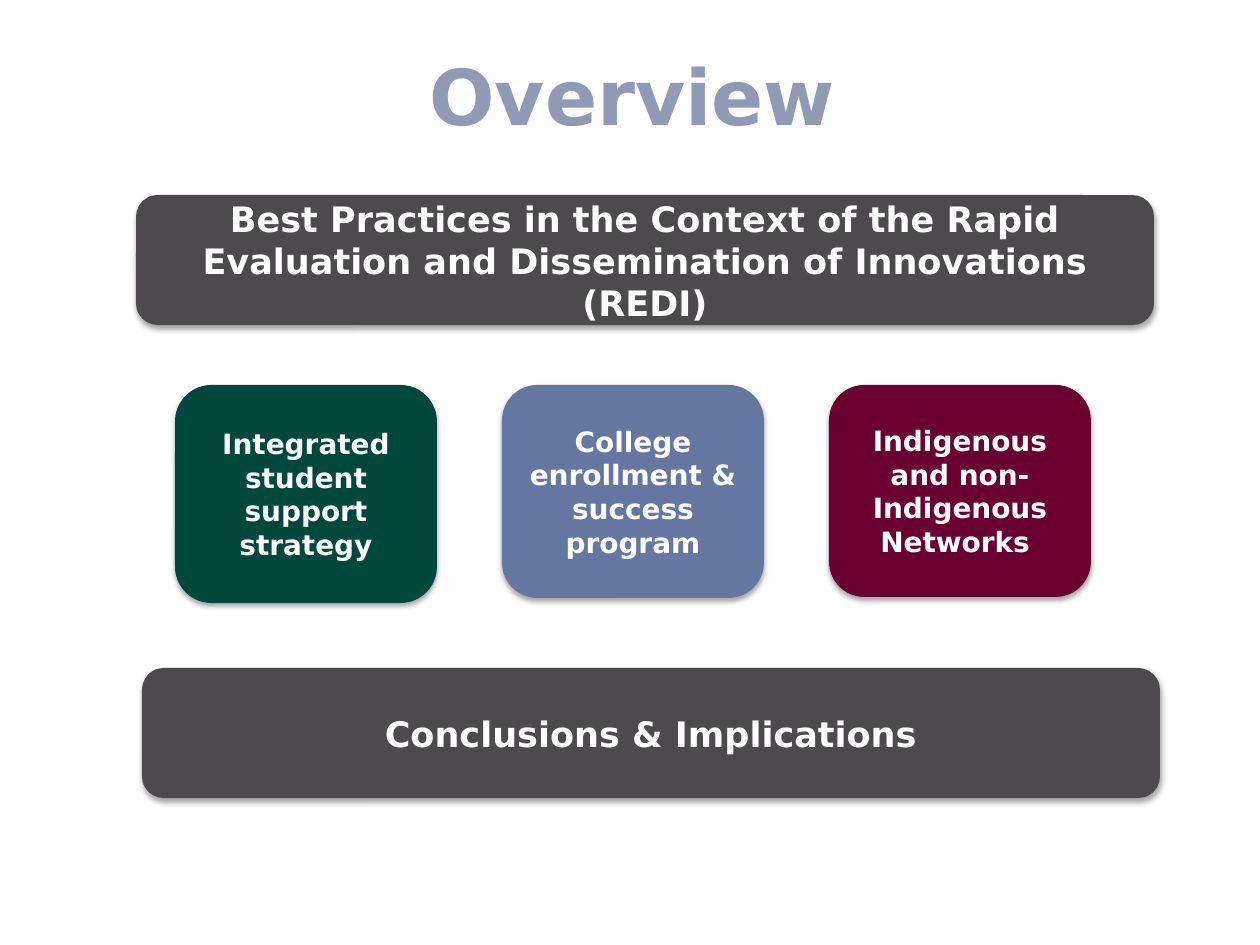
from lxml.etree import SubElement
from pptx import Presentation
from pptx.dml.color import RGBColor
from pptx.enum.shapes import MSO_SHAPE
from pptx.enum.text import MSO_ANCHOR, PP_ALIGN
from pptx.oxml.ns import qn
from pptx.util import Emu, Pt

PX = 914400 // 126
FONT = "DejaVu Sans"
WHITE = RGBColor(0xFF, 0xFF, 0xFF)
LAVENDER = RGBColor(0x90, 0x9A, 0xB7)
CHARCOAL = RGBColor(0x4C, 0x4A, 0x4C)
GREEN = RGBColor(0x00, 0x48, 0x3B)
BLUE = RGBColor(0x65, 0x76, 0xA0)
MAROON = RGBColor(0x6A, 0x00, 0x32)

TITLE = "Overview"
BANNERS = [
    ("Best Practices in the Context of the Rapid Evaluation and "
     "Dissemination of Innovations (REDI)", 136, 195),
    ("Conclusions & Implications", 142, 668),
]
CARDS = [
    ("Integrated student support strategy", GREEN, 218),
    ("College enrollment & success program", BLUE, 213),
    ("Indigenous and non-Indigenous Networks ", MAROON, 212),
]
BANNER_WIDTH, BANNER_HEIGHT = 1018, 130
CARD_LEFT, CARD_TOP, CARD_WIDTH, CARD_STEP = 175, 385, 262, 327


def px(*lengths):
    return [Emu(length * PX) for length in lengths]


def write(box, text, size, color):
    frame = box.text_frame
    frame.word_wrap = True
    frame.vertical_anchor = MSO_ANCHOR.MIDDLE
    para = frame.paragraphs[0]
    para.alignment = PP_ALIGN.CENTER
    span = para.add_run()
    span.text = text
    span.font.name = FONT
    span.font.size = Pt(size)
    span.font.bold = True
    span.font.color.rgb = color


def add_shadow(box):
    box.shadow.inherit = False
    effects = box.element.spPr.find(qn("a:effectLst"))
    shadow = SubElement(effects, qn("a:outerShdw"), blurRad=str(Pt(3.1)),
                        dist=str(Pt(1.8)), dir="5400000", rotWithShape="0")
    color = SubElement(shadow, qn("a:srgbClr"), val="000000")
    SubElement(color, qn("a:alpha"), val="35000")


def add_panel(page, text, size, fill, *bounds):
    box = page.shapes.add_shape(MSO_SHAPE.ROUNDED_RECTANGLE, *px(*bounds))
    box.fill.solid()
    box.fill.fore_color.rgb = fill
    box.line.fill.background()
    add_shadow(box)
    write(box, text, size, WHITE)


def main():
    deck = Presentation()
    deck.slide_width, deck.slide_height = px(1260, 945)
    page = deck.slides.add_slide(deck.slide_layouts[6])

    title = page.shapes.add_textbox(*px(-34, 0, 1333, 189))
    write(title, TITLE, 44, LAVENDER)

    for text, left, top in BANNERS:
        add_panel(page, text, 20, CHARCOAL,
                  left, top, BANNER_WIDTH, BANNER_HEIGHT)

    for index, (text, fill, height) in enumerate(CARDS):
        add_panel(page, text, 16, fill, CARD_LEFT + index * CARD_STEP,
                  CARD_TOP, CARD_WIDTH, height)

    deck.save("out.pptx")


if __name__ == "__main__":
    main()
